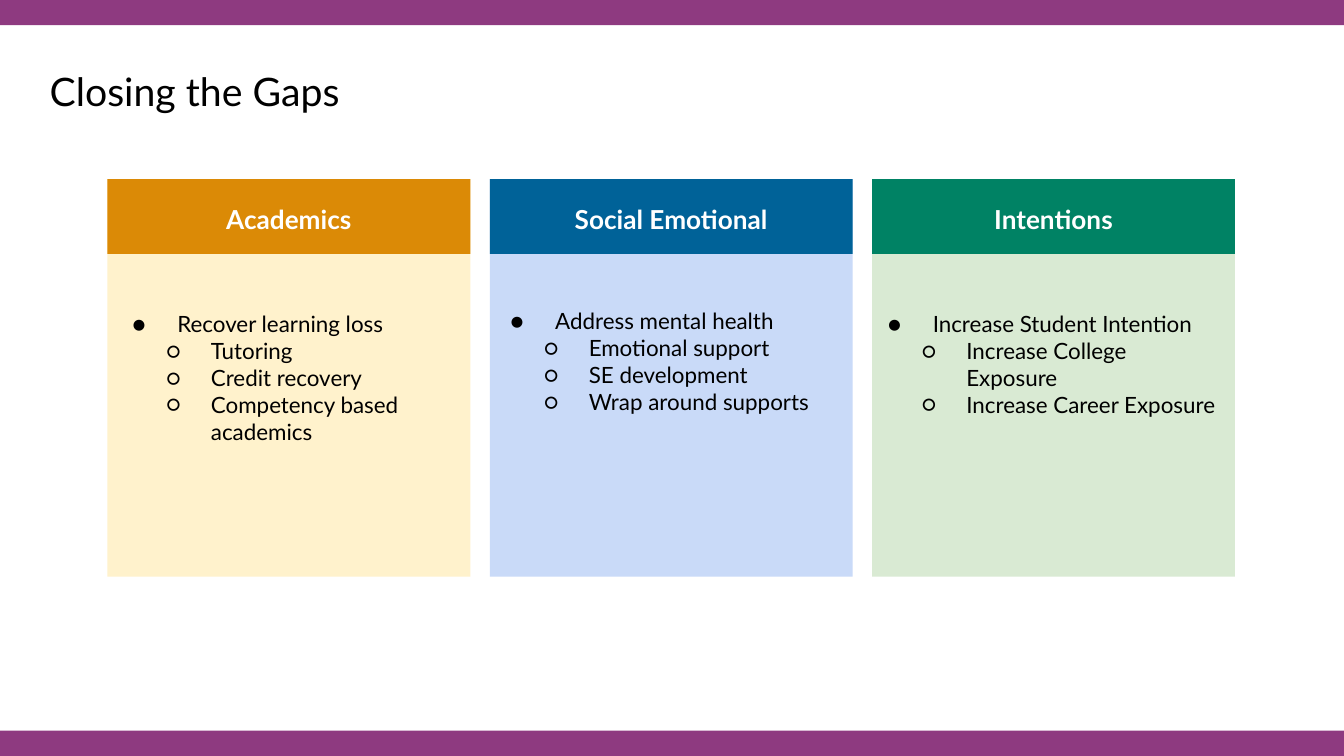
from lxml.etree import SubElement
from pptx import Presentation
from pptx.dml.color import RGBColor
from pptx.enum.shapes import MSO_SHAPE
from pptx.enum.text import MSO_ANCHOR, MSO_AUTO_SIZE, PP_ALIGN
from pptx.oxml.ns import qn
from pptx.util import Pt

PURPLE = "8E3A80"
COLUMN_LEFT, COLUMN_STEP, COLUMN_WIDTH = 57.6, 204.8, 194.4
COLUMN_TOP, CARD_HEIGHT, HEADER_HEIGHT = 96, 213, 40
BULLETS = "●○"

# heading, header colour, card colour, list place (left, top, width, height), items (level, text)
columns = [
    ("Academics", "DB8A06", "FFF2CC", (51.8, 159, 191, 104),
     [(0, "Recover learning loss"), (1, "Tutoring"), (1, "Credit recovery"),
      (1, "Competency based academics")]),
    ("Social Emotional", "006298", "C9DAF8", (254.2, 157.5, 191, 90),
     [(0, "Address mental health"), (1, "Emotional support"), (1, "SE development"),
      (1, "Wrap around supports")]),
    ("Intentions", "008264", "D9EAD3", (456.5, 159, 206, 104),
     [(0, "Increase Student Intention"), (1, "Increase College Exposure"),
      (1, "Increase Career Exposure")]),
]


def add_block(left, top, width, height, color):
    block = page.shapes.add_shape(MSO_SHAPE.RECTANGLE, Pt(left), Pt(top), Pt(width), Pt(height))
    block.shadow.inherit = False
    block.fill.solid()
    block.fill.fore_color.rgb = RGBColor.from_string(color)
    block.line.fill.background()


def place_text(box, place, lines, size, color="000000", bold=False, align=PP_ALIGN.LEFT):
    """Move the box, bring it to the front and fill it with one paragraph per line."""
    box.left, box.top, box.width, box.height = [Pt(length) for length in place]
    box.element.getparent().append(box.element)
    frame = box.text_frame
    frame.text = "\n".join(lines)
    frame.word_wrap = True
    frame.auto_size = MSO_AUTO_SIZE.NONE
    frame.vertical_anchor = MSO_ANCHOR.TOP
    frame.margin_left = frame.margin_right = frame.margin_top = frame.margin_bottom = Pt(7.2)
    for para in frame.paragraphs:
        para.alignment = align
        para.line_spacing = 1.0
        para.space_before = para.space_after = Pt(0)
        for span in para.runs:
            span.font.name = "Lato"
            span.font.size = Pt(size)
            span.font.bold = bold
            span.font.color.rgb = RGBColor.from_string(color)


deck = Presentation()
deck.slide_width, deck.slide_height = Pt(720), Pt(405)
page = deck.slides.add_slide(deck.slide_layouts.get_by_name("Comparison"))
bodies = list(page.placeholders)[1:]

for bar_top in (0, 391.5):
    add_block(0, bar_top, 720, 13.5, PURPLE)

place_text(page.shapes.title, (19.4, 28.8, 401, 40.3), ["Closing the Gaps"], 21)

for index, (heading, header_color, card_color, list_place, items) in enumerate(columns):
    left = COLUMN_LEFT + index * COLUMN_STEP
    add_block(left, COLUMN_TOP, COLUMN_WIDTH, CARD_HEIGHT, card_color)
    add_block(left, COLUMN_TOP, COLUMN_WIDTH, HEADER_HEIGHT, header_color)
    heading_box = page.shapes.add_textbox(0, 0, 0, 0)
    place_text(heading_box, (left + 3.6, 101.5, 187.2, 31.7), [heading], 14,
               "FFFFFF", True, PP_ALIGN.CENTER)

    body = bodies[index]
    place_text(body, list_place, [text for level, text in items], 12)
    for para, (level, text) in zip(body.text_frame.paragraphs, items):
        para.level = level
        properties = para._p.get_or_add_pPr()
        properties.set("marL", str(Pt(36 + 18 * level)))
        properties.set("indent", str(Pt(-24)))
        bullet_color = SubElement(properties, qn("a:buClr"))
        SubElement(bullet_color, qn("a:srgbClr"), val="000000")
        SubElement(properties, qn("a:buFont"), typeface="Lato")
        SubElement(properties, qn("a:buChar"), char=BULLETS[level])

for spare in bodies[len(columns):]:
    spare.element.getparent().remove(spare.element)

deck.save("out.pptx")
